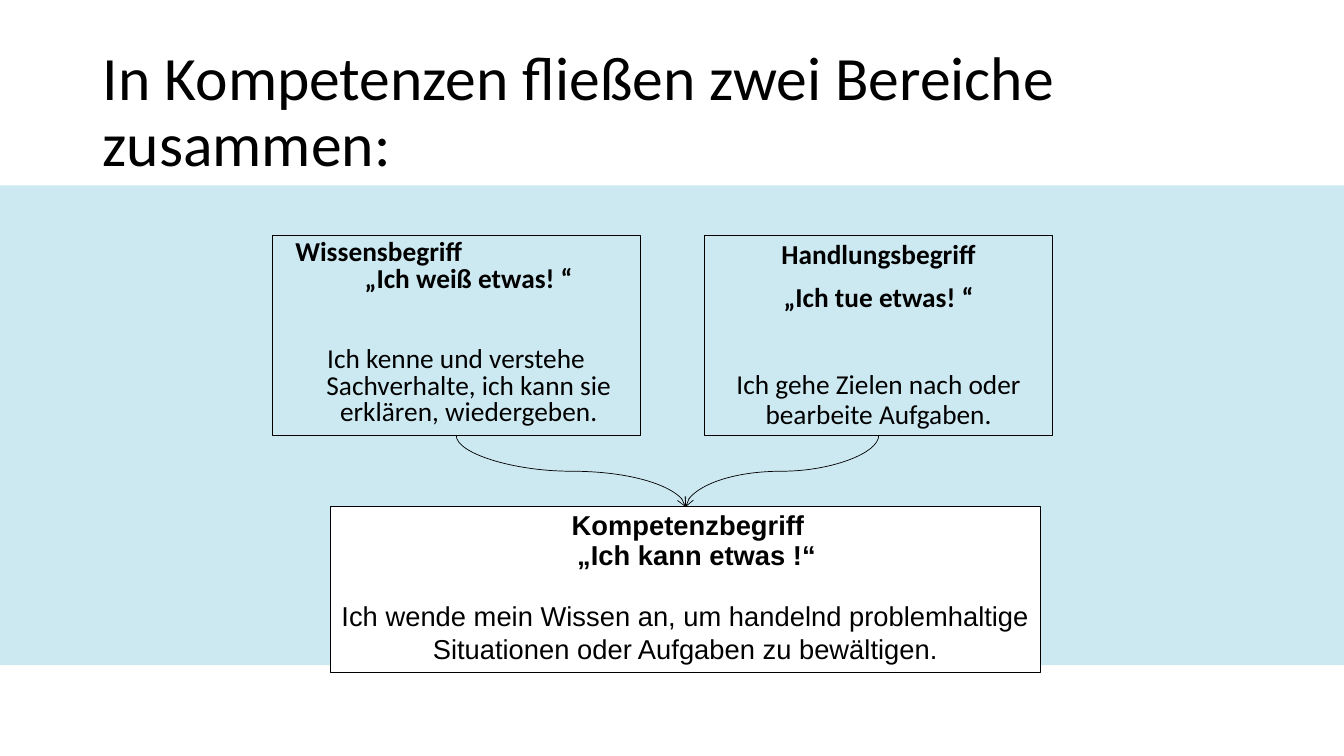
from lxml.etree import SubElement
from pptx import Presentation
from pptx.dml.color import RGBColor
from pptx.enum.shapes import MSO_CONNECTOR, MSO_SHAPE
from pptx.enum.text import MSO_ANCHOR, MSO_AUTO_SIZE, PP_ALIGN
from pptx.oxml.ns import qn
from pptx.util import Emu, Inches, Pt

COLORS = {"black": "000000", "white": "FFFFFF", "band": "CCE9F2"}
TITLE = "In Kompetenzen fließen zwei Bereiche zusammen:"
BAND = (0, 1.84, 13.33, 4.76)

# Each line: text, bold, paragraph format, left margin and first-line indent in inches
KNOWLEDGE = {
    "box": (2.7, 2.34, 3.65, 1.98), "fill": None, "font": "Calibri",
    "lines": [
        ("Wissensbegriff", True,
         {"alignment": PP_ALIGN.LEFT, "line_spacing": 0.8}, (0.13, 0)),
        ("„Ich weiß etwas! “", True, {"line_spacing": 0.8}, (0.25, 0)),
        ("Ich kenne und verstehe Sachverhalte, ich kann sie erklären, wiedergeben.",
         False, {"line_spacing": 0.8, "space_before": Pt(39)}, (0.25, -0.25)),
    ],
}
ACTION = {
    "box": (6.99, 2.34, 3.45, 1.98), "fill": None, "font": "Calibri",
    "lines": [
        ("Handlungsbegriff", True, {"line_spacing": 0.9}, (0, 0)),
        ("„Ich tue etwas! “", True,
         {"line_spacing": 0.9, "space_before": Pt(10)}, (0, 0)),
        ("Ich gehe Zielen nach oder bearbeite Aufgaben.", False,
         {"line_spacing": 0.9, "space_before": Pt(41)}, (0, 0)),
    ],
}
COMPETENCE = {
    "box": (3.28, 5.03, 7.04, 1.64), "fill": "white", "font": "Arial",
    "lines": [
        ("Kompetenzbegriff", True, {"line_spacing": 0.9}, (0.05, 0)),
        ("„Ich kann etwas !“", True, {"line_spacing": 0.9}, (0.22, 0)),
        ("Ich wende mein Wissen an, um handelnd problemhaltige Situationen "
         "oder Aufgaben zu bewältigen.", False,
         {"line_spacing": 1.0, "space_before": Pt(20)}, (0, 0)),
    ],
}


def color(name):
    return RGBColor.from_string(COLORS[name])


def set_all(target, values):
    for key, value in values.items():
        setattr(target, key, value)


def set_font(paragraph, name, size, bold=False):
    set_all(paragraph.font, {"name": name, "size": Pt(size), "bold": bold})
    paragraph.font.color.rgb = color("black")


def add_rectangle(slide, box, fill, outlined):
    rectangle = slide.shapes.add_shape(MSO_SHAPE.RECTANGLE, *map(Inches, box))
    rectangle.shadow.inherit = False
    if fill:
        rectangle.fill.solid()
        rectangle.fill.fore_color.rgb = color(fill)
    else:
        rectangle.fill.background()
    if outlined:
        rectangle.line.color.rgb = color("black")
        rectangle.line.width = Pt(0.75)
    else:
        rectangle.line.fill.background()
    return rectangle


def add_concept(slide, concept):
    rectangle = add_rectangle(slide, concept["box"], concept["fill"], True)
    frame = rectangle.text_frame
    set_all(frame, {"word_wrap": True, "vertical_anchor": MSO_ANCHOR.TOP})
    for index, (text, bold, layout, (margin, indent)) in enumerate(concept["lines"]):
        paragraph = frame.paragraphs[0] if index == 0 else frame.add_paragraph()
        paragraph.text = text
        set_all(paragraph, {"alignment": PP_ALIGN.CENTER, **layout})
        properties = paragraph._p.get_or_add_pPr()
        properties.set("marL", str(Inches(margin)))
        properties.set("indent", str(Inches(indent)))
        set_font(paragraph, concept["font"], 19.5, bold)
    return rectangle


def add_flow(slide, source, target):
    """Draw a curved arrow from the bottom of source to the top of target."""
    start_x, start_y = source.left + source.width // 2, source.top + source.height
    end_x, end_y = target.left + target.width // 2, target.top
    drop, reach = end_y - start_y, abs(end_x - start_x)
    left = (start_x + end_x - drop) // 2
    top = (start_y + end_y - reach) // 2
    # The curve leaves sideways, so it is laid out flat and turned downwards
    rightward = end_x > start_x
    begin, end = (left + drop, left) if rightward else (left, left + drop)
    arrow = slide.shapes.add_connector(
        MSO_CONNECTOR.CURVE, Emu(begin), Emu(top), Emu(end), Emu(top + reach))
    properties = arrow._element.spPr
    degrees = 270 if rightward else 90
    properties.find(qn("a:xfrm")).set("rot", str(degrees * 60000))
    arrow.line.color.rgb = color("black")
    arrow.line.width = Pt(0.5)
    SubElement(properties.find(qn("a:ln")), qn("a:tailEnd")).set("type", "arrow")
    SubElement(properties, qn("a:effectLst"))


def main():
    deck = Presentation()
    deck.slide_width, deck.slide_height = Inches(13.33), Inches(7.5)
    slide = deck.slides.add_slide(deck.slide_layouts[5])
    add_rectangle(slide, BAND, "band", False)

    title = slide.shapes.title
    set_all(title, {"left": Inches(0.92), "top": Inches(0.4),
                    "width": Inches(11.5), "height": Inches(1.45)})
    title.text = TITLE
    set_all(title.text_frame, {"word_wrap": True, "auto_size": MSO_AUTO_SIZE.NONE,
                               "vertical_anchor": MSO_ANCHOR.MIDDLE})
    heading = title.text_frame.paragraphs[0]
    set_all(heading, {"alignment": PP_ALIGN.LEFT, "line_spacing": 0.9})
    set_font(heading, "Calibri", 44)

    knowledge, action, competence = [
        add_concept(slide, concept) for concept in (KNOWLEDGE, ACTION, COMPETENCE)]
    for source in (knowledge, action):
        add_flow(slide, source, competence)
    deck.save("out.pptx")


if __name__ == "__main__":
    main()
